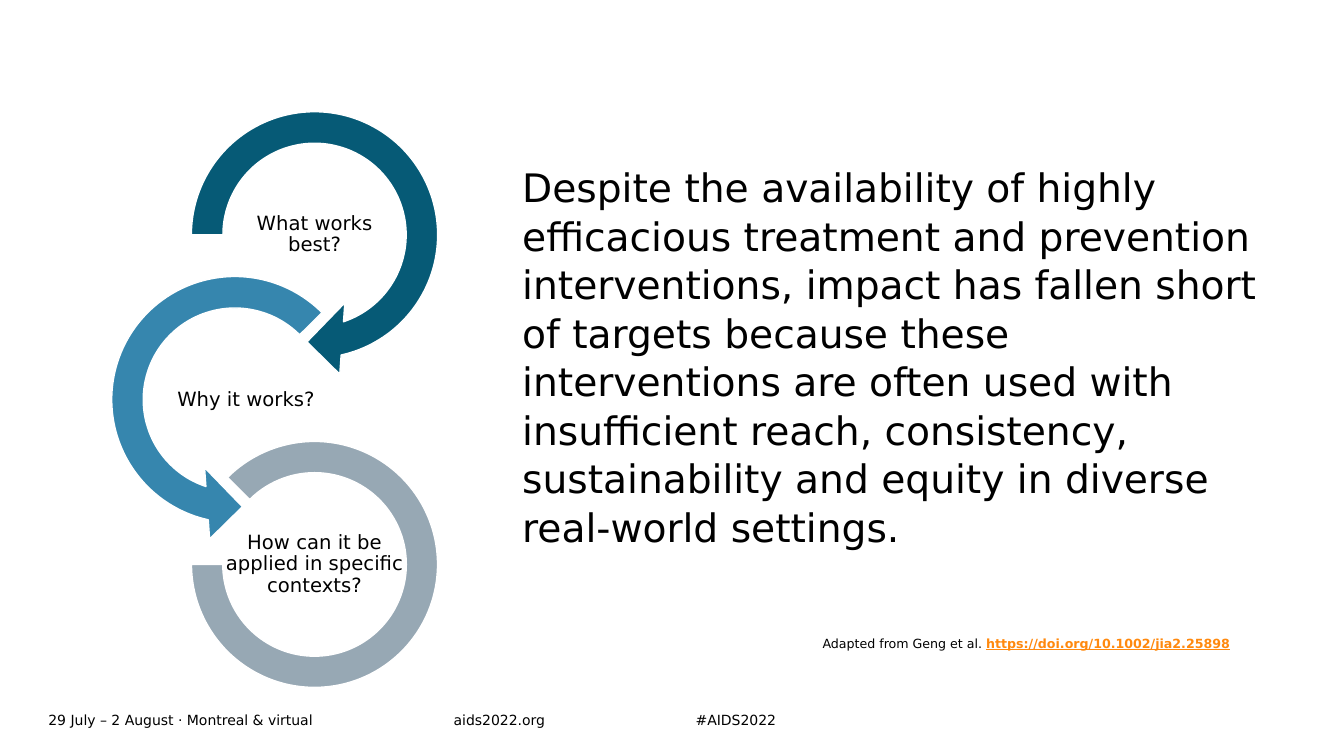
from pptx import Presentation
from pptx.dml.color import RGBColor
from pptx.enum.shapes import MSO_SHAPE
from pptx.enum.text import MSO_ANCHOR, MSO_AUTO_SIZE, PP_ALIGN
from pptx.util import Inches, Pt

BLACK = RGBColor(0x00, 0x00, 0x00)
WHITE = RGBColor(0xFF, 0xFF, 0xFF)
TEAL = RGBColor(0x06, 0x5A, 0x76)
BLUE = RGBColor(0x36, 0x86, 0xAE)
GREY = RGBColor(0x97, 0xA8, 0xB4)
ORANGE = RGBColor(0xFF, 0x89, 0x0E)
FONT = "DejaVu Sans"

WIDTH, HEIGHT = 13.33, 7.5
FOOTER = [
    ("29 July – 2 August · Montreal & virtual", 0.48, 4.02),
    ("aids2022.org", 4.5, 1.93),
    ("#AIDS2022", 6.9, 1.93),
]
MESSAGE = (
    "Despite the availability of highly efficacious treatment and prevention "
    "interventions, impact has fallen short of targets because these interventions "
    "are often used with insufficient reach, consistency, sustainability and equity "
    "in diverse real-world settings."
)
CREDIT = [
    ("Adapted from Geng et al. ", {}),
    ("https://doi.org/10.1002/jia2.25898",
     {"color": ORANGE, "bold": True, "underline": True}),
]
RIGHT_RING, LEFT_RING = 3.12, 2.33
RING_TOP, RING_BOTTOM = 2.33, 5.6
LABEL_HEIGHT = 0.79
RINGS = [
    ("What works best?", MSO_SHAPE.CIRCULAR_ARROW, TEAL, RIGHT_RING, 2.84,
     (0.11, 11.42, 45, 108, 0.125), RIGHT_RING, 1.58),
    ("Why it works?", MSO_SHAPE.LEFT_CIRCULAR_ARROW, BLUE, LEFT_RING, 2.84,
     (0.11, 11.42, 63, 189, 0.125), 2.44, 2.11),
    ("How can it be applied in specific contexts?", MSO_SHAPE.BLOCK_ARC, GREY,
     RIGHT_RING, 2.44, (135, 108, 0.127), RIGHT_RING, 2.04),
]


def add_text(page, spans, area, size, inset=0, **paragraph_format):
    box = page.shapes.add_textbox(*map(Inches, area))
    frame = box.text_frame
    frame.word_wrap = True
    frame.vertical_anchor = MSO_ANCHOR.MIDDLE
    for side in ("left", "top", "right", "bottom"):
        setattr(frame, f"margin_{side}", Inches(inset))
    para = frame.paragraphs[0]
    for name, value in paragraph_format.items():
        setattr(para, name, value)
    for text, changes in spans:
        span = para.add_run()
        span.text = text
        look = {"name": FONT, "size": Pt(size), "color": BLACK} | changes
        span.font.color.rgb = look.pop("color")
        for name, value in look.items():
            setattr(span.font, name, value)
    return frame


def add_ring(page, kind, color, center, middle, size, adjustments):
    corner = (center - size / 2, middle - size / 2)
    ring = page.shapes.add_shape(kind, *map(Inches, (*corner, size, size)))
    ring.shadow.inherit = False
    ring.fill.solid()
    ring.fill.fore_color.rgb = color
    ring.line.color.rgb = WHITE
    ring.line.width = Pt(1)
    for index, value in enumerate(adjustments):
        ring.adjustments[index] = value


def main():
    deck = Presentation()
    deck.slide_width, deck.slide_height = Inches(WIDTH), Inches(HEIGHT)
    page = deck.slides.add_slide(deck.slide_layouts[6])

    for text, left, width in FOOTER:
        add_text(page, [(text, {})], (left, 7.02, width, 0.24), 10)

    message = add_text(page, [(MESSAGE, {})], (5.18, 1.61, 7.43, 4.35), 28,
                       line_spacing=1.03)
    message.vertical_anchor = MSO_ANCHOR.TOP

    step = (RING_BOTTOM - RING_TOP) / (len(RINGS) - 1)
    for row, ring in enumerate(RINGS):
        label, kind, color, center, size, adjustments, label_center, width = ring
        middle = RING_TOP + row * step
        add_ring(page, kind, color, center, middle, size, adjustments)
        area = (label_center - width / 2, middle - LABEL_HEIGHT / 2, width, LABEL_HEIGHT)
        add_text(page, [(label, {})], area, 14, inset=0.01,
                 alignment=PP_ALIGN.CENTER, line_spacing=0.9)

    credit = add_text(page, CREDIT, (8.06, 6.26, 4.47, 0.25), 9, inset=0.1)
    credit.margin_top = credit.margin_bottom = Inches(0.05)
    credit.vertical_anchor = MSO_ANCHOR.TOP
    credit.word_wrap = False
    credit.auto_size = MSO_AUTO_SIZE.SHAPE_TO_FIT_TEXT

    deck.save("out.pptx")


if __name__ == "__main__":
    main()
